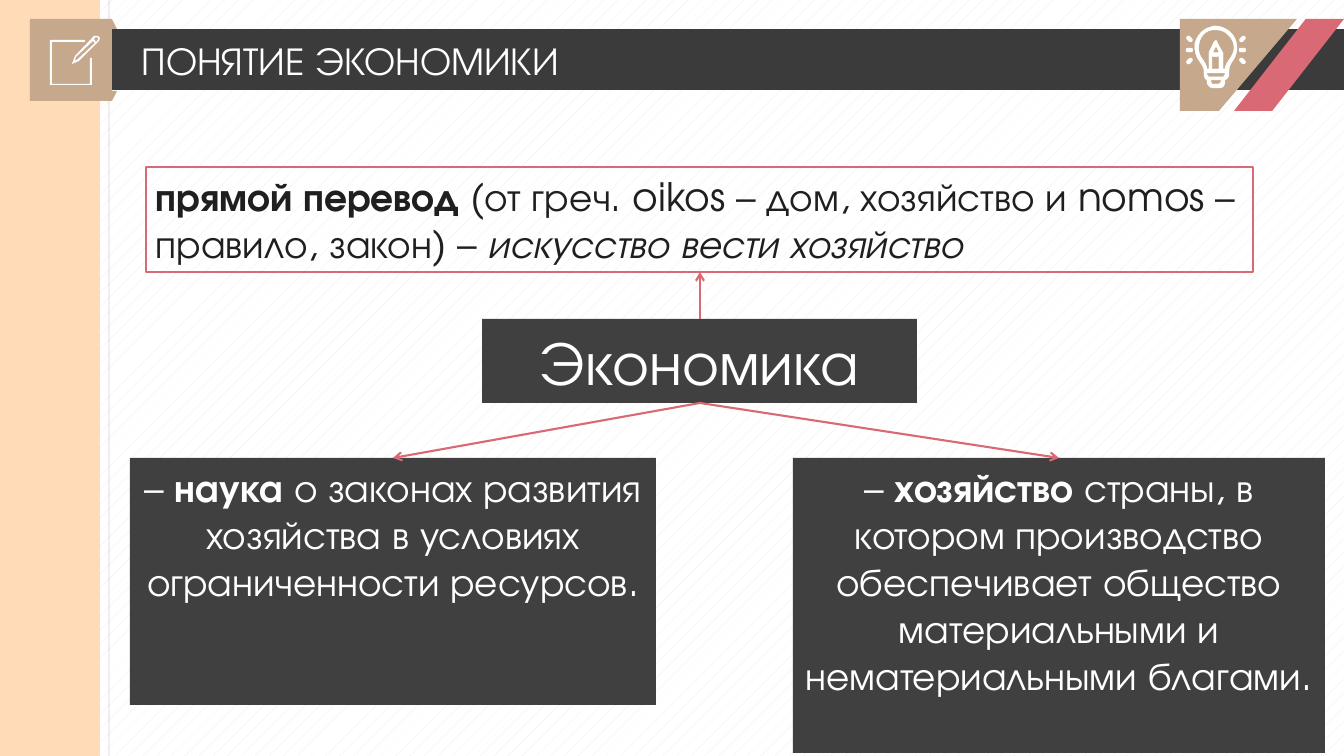
from lxml import etree
from pptx import Presentation
from pptx.dml.color import RGBColor
from pptx.enum.dml import MSO_PATTERN
from pptx.enum.shapes import MSO_CONNECTOR, MSO_SHAPE
from pptx.enum.text import MSO_ANCHOR, PP_ALIGN
from pptx.oxml.ns import qn
from pptx.util import Pt

RECT, ROUND = MSO_SHAPE.RECTANGLE, MSO_SHAPE.ROUNDED_RECTANGLE
CORNER, SLANT = MSO_SHAPE.RIGHT_TRIANGLE, MSO_SHAPE.PARALLELOGRAM
STRAIGHT = MSO_CONNECTOR.STRAIGHT
LEFT, CENTER = PP_ALIGN.LEFT, PP_ALIGN.CENTER
TOP, MIDDLE = MSO_ANCHOR.TOP, MSO_ANCHOR.MIDDLE
DOTS = MSO_PATTERN.PERCENT_5

FONT = "TeX Gyre Adventor"
WHITE, INK, BAR, BOX = "FFFFFF", "1F1F1F", "3B3B3B", "404040"
PEACH, TAN, ROSE, PALE = "FFDBB7", "C6A98C", "D96974", "E9E9E9"
PX = 914400 / 100.8
WIDE, HIGH = 1344, 756

# Content: text runs are (text, style), style "b" bold, "i" italic
TITLE = [("ПОНЯТИЕ ЭКОНОМИКИ", "")]
BOXES = [  # place, fill, line, font colour, size, alignment, runs
    ((482, 319, 435, 84), BOX, None, WHITE, 44, CENTER, [("Экономика", "")]),
    ((146, 167, 1107, 105), None, ROSE, INK, 28, LEFT, [
        ("прямой перевод ", "b"),
        ("(от греч. oikos – дом, хозяйство и nomos – правило, закон) – ", ""),
        ("искусство вести хозяйство", "i")]),
    ((130, 458, 526, 247), BOX, None, WHITE, 28, CENTER, [
        ("– ", ""), ("наука", "b"),
        (" о законах развития хозяйства в условиях ограниченности ресурсов.", "")]),
    ((793, 458, 532, 295), BOX, None, WHITE, 28, CENTER, [
        ("– ", ""), ("хозяйство", "b"),
        (" страны, в котором производство обеспечивает общество "
         "материальными и нематериальными благами.", "")]),
]
ARROWS = [((700, 319), (700, 272)), ((700, 403), (393, 458)), ((700, 403), (1059, 458))]

# Outlines: two numbers make a line, six numbers a curve
BADGE = [[(1180, 19), (1297, 19), (1219, 111), (1180, 111)]]
FRAME = [[(90, 58), (90, 84), (52, 84), (52, 42), (85, 42), (85, 40),
          (50, 40), (50, 85), (92, 85), (92, 58)]]
PENCIL = [
    [(100, 38), (98, 36), (94, 36), (75, 56), (72, 64), (79, 61), (99, 41)],
    [(98, 40), (96, 42), (94, 39), (96, 37), (98, 38)],
    [(78, 59), (75, 61), (76, 57), (93, 41), (95, 43)],
]
BULB_AT = (1194, 26)
BULB = [
    [(21, 0), (20, 0, 19, 0, 17, 1), (10, 2, 3, 9, 1, 17), (0, 24, 2, 31, 6, 36),
     (8, 39, 10, 42, 10, 45), (10, 49), (10, 51, 11, 53, 13, 54), (13, 56),
     (13, 59, 16, 62, 19, 62), (26, 62), (29, 62, 31, 59, 31, 56), (31, 54),
     (33, 53, 35, 51, 35, 49), (35, 45), (35, 42, 36, 39, 38, 36),
     (41, 32, 43, 27, 43, 22), (43, 15, 40, 9, 35, 5), (31, 2, 26, 0, 21, 0)],
    [(22, 4), (26, 4, 30, 5, 33, 8), (37, 11, 40, 16, 40, 22),
     (40, 26, 38, 30, 35, 34), (33, 37, 31, 40, 31, 43), (29, 43), (29, 27),
     (23, 16), (23, 14, 21, 14, 20, 16), (15, 26), (15, 43), (13, 43),
     (13, 40, 11, 37, 9, 34), (5, 29, 4, 24, 5, 18), (6, 11, 11, 5, 18, 4)],
    [(22, 20), (25, 26), (24, 27, 20, 27, 19, 26)],
    [(25, 30), (25, 43), (18, 43), (18, 30), (19, 31, 23, 31, 25, 30)],
    [(31, 47), (31, 49), (29, 51), (15, 51), (13, 49), (13, 47)],
    [(27, 54), (27, 56), (25, 58), (18, 58), (17, 56), (17, 54)],
]
RAY_SIDES = [(1189, 1), (1242, -1)]
RAY_ROWS = [(39, 45), (50, 0), (61, -45)]

deck = Presentation()
deck.slide_width, deck.slide_height = round(WIDE * PX), round(HIGH * PX)
slide = deck.slides.add_slide(deck.slide_layouts[6])
shapes = slide.shapes


def rgb(code):
    return RGBColor.from_string(code)


def emu(nums):
    return [round(n * PX) for n in nums]


def paint(shape, fill, line=None, width=1.5):
    shape.shadow.inherit = False
    if fill:
        shape.fill.solid()
        shape.fill.fore_color.rgb = rgb(fill)
    else:
        shape.fill.background()
    if line:
        shape.line.color.rgb = rgb(line)
        shape.line.width = Pt(width)
    else:
        shape.line.fill.background()
    return shape


def block(place, fill, line=None, kind=RECT, width=1.5):
    return paint(shapes.add_shape(kind, *emu(place)), fill, line, width)


def write(shape, runs, color, size, align=LEFT, anchor=TOP):
    frame = shape.text_frame
    frame.word_wrap = True
    frame.vertical_anchor = anchor
    para = frame.paragraphs[0]
    para.alignment = align
    para.font.name, para.font.size = FONT, Pt(size)
    para.font.color.rgb = rgb(color)
    for text, style in runs:
        run = para.add_run()
        run.text = text
        if style == "b":
            run.font.bold = True
        elif style == "i":
            run.font.italic = True
    return frame


def flat(loop, steps=6):
    """Turn the curves of a loop into short lines."""
    dots = [loop[0]]
    for part in loop[1:]:
        if len(part) == 2:
            dots.append(part)
            continue
        a, b, c, d = dots[-1], part[:2], part[2:4], part[4:]
        for n in range(1, steps + 1):
            t = n / steps
            u = 1 - t
            dots.append(tuple(
                u**3 * a[k] + 3 * u * u * t * b[k] + 3 * u * t * t * c[k] + t**3 * d[k]
                for k in (0, 1)))
    return dots


def draw(loops, fill, at=(0, 0), line=None):
    pen = None
    for loop in loops:
        dots = [emu((x + at[0], y + at[1])) for x, y in flat(loop)]
        if pen is None:
            pen = shapes.build_freeform(*dots[0], scale=1.0)
        else:
            pen.move_to(*dots[0])
        pen.add_line_segments(dots[1:], close=True)
    paint(pen.convert_to_shape(), fill, line, 0.25)


def link(start, end, color, width):
    wire = shapes.add_connector(STRAIGHT, *emu(start + end))
    wire.line.color.rgb = rgb(color)
    wire.line.width = Pt(width)
    props = wire._element.spPr
    etree.SubElement(props, qn("a:effectLst"))
    return props.find(qn("a:ln"))


# Background and left margin
back = slide.background.fill
back.patterned()
back.pattern = DOTS
back.fore_color.rgb, back.back_color.rgb = rgb(PALE), rgb(WHITE)
rule = link((109, 0), (109, HIGH), INK, 0.5)
tint = rule.find(".//" + qn("a:srgbClr"))
etree.SubElement(tint, qn("a:alpha")).set("val", "20000")

# Header bar, side band and tag
block((0, 29, WIDE, 61), BAR)
block((0, 0, 100, HIGH), PEACH)
block((30, 19, 82, 82), TAN)
block((112, 19, 5, 10), TAN, kind=CORNER)
fold = block((112, 91, 5, 10), TAN, kind=CORNER)
fold._element.spPr.find(qn("a:xfrm")).set("flipV", "1")
head = write(shapes.add_textbox(*emu((142, 36, 1062, 47))), TITLE, WHITE, 28, anchor=MIDDLE)
head.margin_left = head.margin_right = head.margin_top = head.margin_bottom = 0

# Badge with bulb, then pencil icon
draw(BADGE, TAN)
stripe = block((1234, 19, 110, 92), ROSE, kind=SLANT)
stripe.adjustments[0] = 0.78
draw(BULB, WHITE, BULB_AT, WHITE)
for x, side in RAY_SIDES:
    for y, turn in RAY_ROWS:
        ray = block((x - 3, y - 2, 7, 4), WHITE, WHITE, ROUND, 0.25)
        ray.adjustments[0] = 0.5
        ray.rotation = side * turn
draw(FRAME, WHITE)
draw(PENCIL, WHITE)

# Boxes and arrows
for place, fill, line, color, size, align, runs in BOXES:
    write(block(place, fill, line), runs, color, size, align)
for start, end in ARROWS:
    etree.SubElement(link(start, end, ROSE, 1.5), qn("a:tailEnd")).set("type", "arrow")

deck.save("out.pptx")
